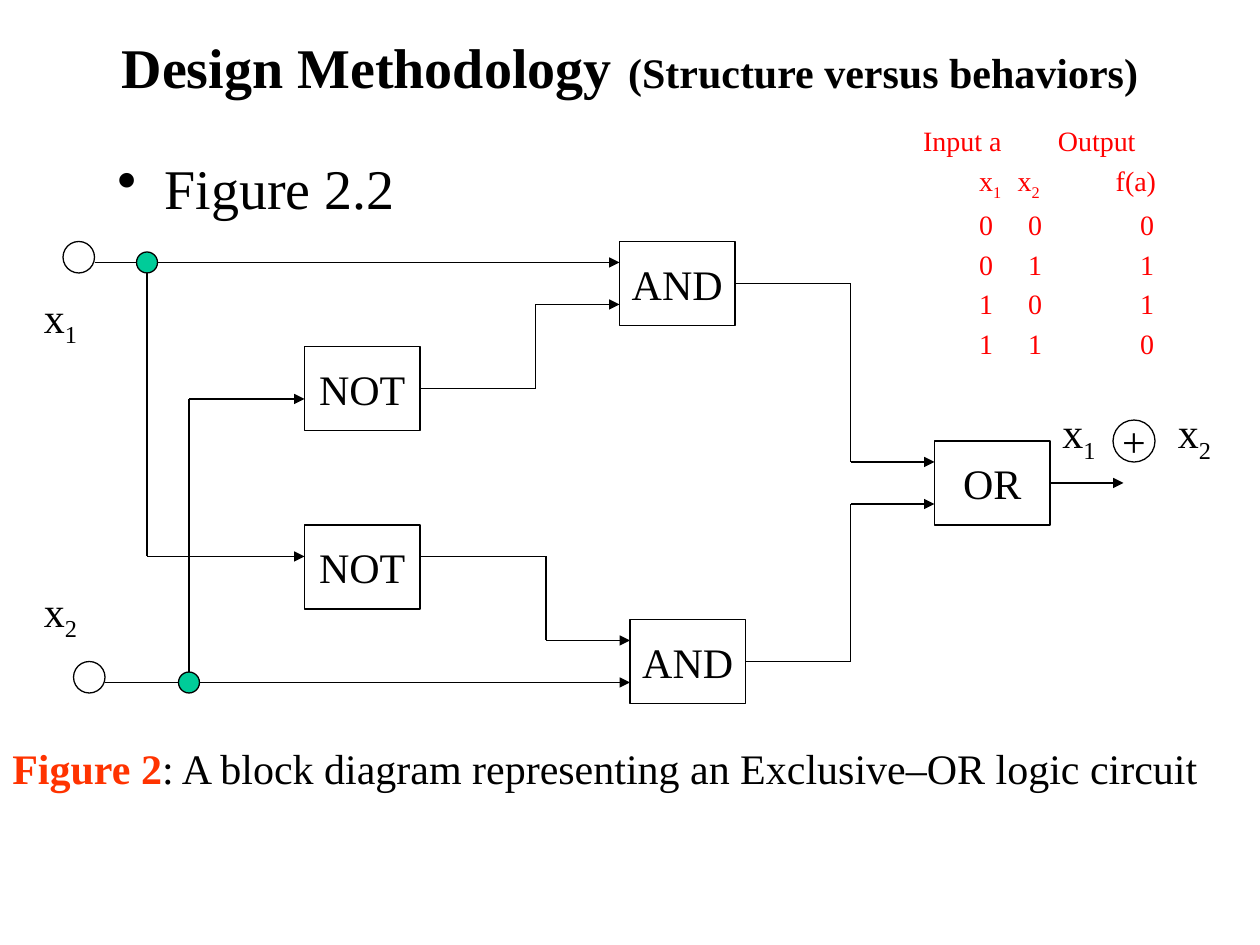
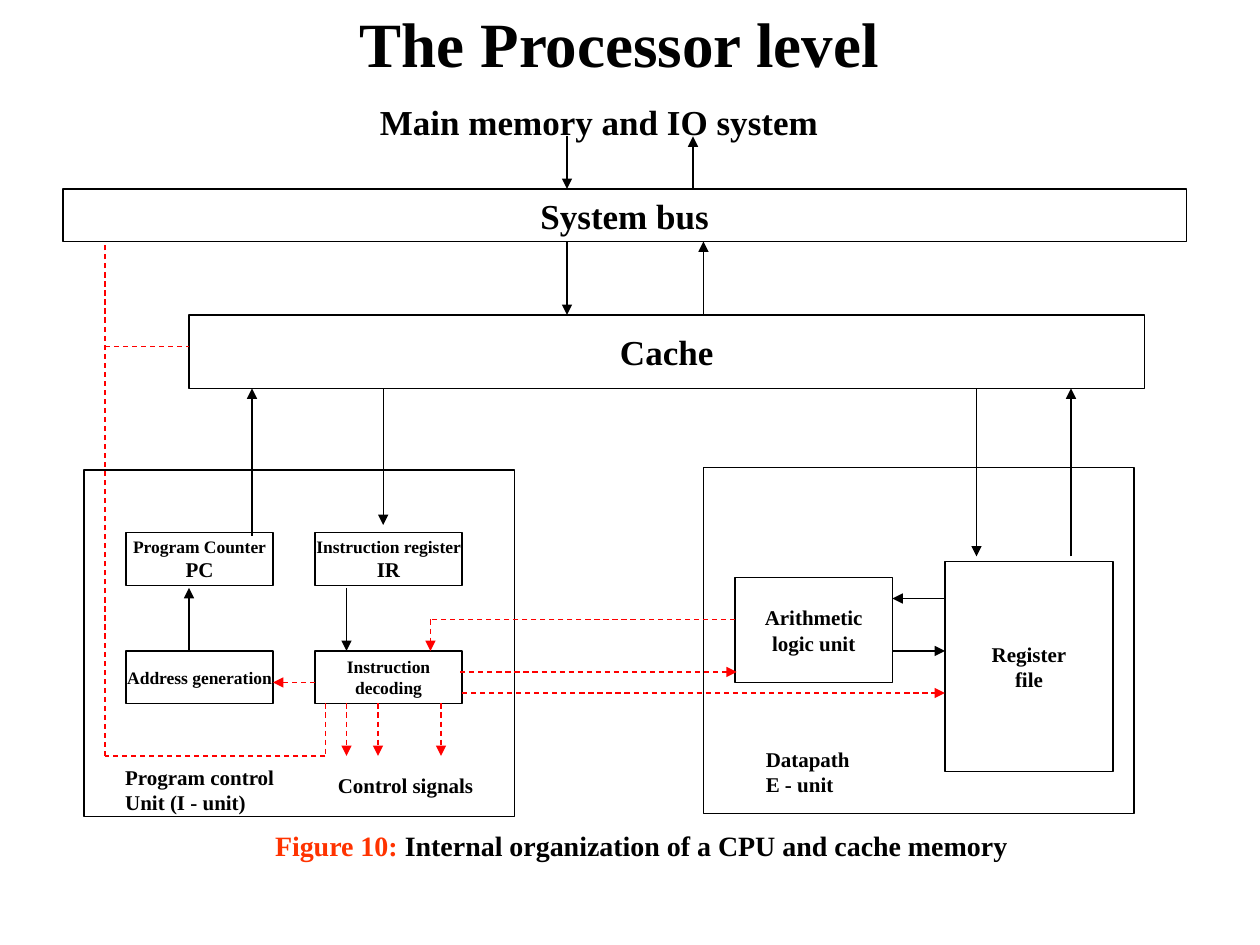
"""Build two slides of block diagrams: an exclusive-OR circuit and a processor."""
from collections import namedtuple

from lxml import etree
from pptx import Presentation
from pptx.dml.color import RGBColor
from pptx.enum import dml, shapes, text
from pptx.oxml import ns
from pptx.util import Pt

FONT = "Times New Roman"
BLACK, WHITE, RED, ORANGE, GREEN = "000000", "FFFFFF", "FF0000", "FF3300", "00CC99"
LEFT, CENTER = text.PP_ALIGN.LEFT, text.PP_ALIGN.CENTER
RIGHT_SIDE = 3

Run = namedtuple("Run", "text size color bold sub", defaults=(BLACK, False, False))


def rgb(value):
    return RGBColor.from_string(value)


def sub_element(parent, tag, **attrs):
    return etree.SubElement(parent, ns.qn(tag), **attrs)


def write(tf, paragraphs, align=LEFT, gap=0):
    """Fill a text frame; each paragraph is a list of runs."""
    for i, runs in enumerate(paragraphs):
        p = tf.paragraphs[0] if i == 0 else tf.add_paragraph()
        p.alignment = align
        p.space_before = Pt(gap)
        for run in runs:
            r = p.add_run()
            r.text = run.text
            r.font.name = FONT
            r.font.size = Pt(run.size)
            r.font.bold = run.bold
            r.font.color.rgb = rgb(run.color)
            if run.sub:
                r._r.get_or_add_rPr().set("baseline", "-25000")


def bold_lines(*lines):
    """Turn (text, size) pairs into bold paragraphs."""
    return [[Run(line, size, bold=True)] for line, size in lines]


def add_title_slide(prs, box, runs):
    s = prs.slides.add_slide(prs.slide_layouts[5])
    title = s.shapes.title
    title.left, title.top, title.width, title.height = map(Pt, box)
    tf = title.text_frame
    tf.auto_size = text.MSO_AUTO_SIZE.NONE
    tf.vertical_anchor = text.MSO_ANCHOR.MIDDLE
    write(tf, [runs], CENTER)
    return s


def add_text(s, box, paragraphs, align=LEFT, gap=0):
    tf = s.shapes.add_textbox(*map(Pt, box)).text_frame
    tf.word_wrap = True
    write(tf, paragraphs, align, gap)
    return tf


def add_block(s, box, paragraphs=(), kind=shapes.MSO_SHAPE.RECTANGLE, fill=WHITE):
    sp = s.shapes.add_shape(kind, *map(Pt, box))
    sp.shadow.inherit = False
    sp.fill.solid()
    sp.fill.fore_color.rgb = rgb(fill)
    sp.line.color.rgb = rgb(BLACK)
    sp.line.width = Pt(0.75)
    tf = sp.text_frame
    tf.word_wrap = False
    tf.vertical_anchor = text.MSO_ANCHOR.MIDDLE
    write(tf, paragraphs, CENTER)
    return sp


def add_circle(s, x, y, size, paragraphs=(), fill=WHITE):
    return add_block(s, (x, y, size, size), paragraphs, shapes.MSO_SHAPE.OVAL, fill)


def add_route(s, *points, arrow=True, control=False, source=None):
    """Draw straight segments through the points, with an arrowhead at the end."""
    for i, (start, end) in enumerate(zip(points, points[1:])):
        c = s.shapes.add_connector(shapes.MSO_CONNECTOR.STRAIGHT, *map(Pt, start + end))
        if source is not None and i == 0:
            c.begin_connect(source, RIGHT_SIDE)
        c.line.color.rgb = rgb(RED if control else BLACK)
        c.line.width = Pt(0.75)
        if control:
            c.line.dash_style = dml.MSO_LINE.DASH
        properties = c._element.spPr
        if arrow and i == len(points) - 2:
            sub_element(properties.find(ns.qn("a:ln")), "a:tailEnd", type="triangle")
        sub_element(properties, "a:effectLst")


def add_variable(s, x, y, index):
    add_text(s, (x, y, 42, 36), [[Run("x", 24), Run(index, 24, sub=True)]])


def add_bullet(s, box, line, size):
    p = add_text(s, box, [[Run(line, size)]], gap=4).paragraphs[0]
    pPr = p._p.get_or_add_pPr()
    pPr.set("marL", str(Pt(27)))
    pPr.set("indent", str(Pt(-27)))
    sub_element(pPr, "a:buChar", char="•")


def add_truth_table(s, box):
    """Write the truth table as lines aligned on tab stops."""
    def red(line, sub=False):
        return Run(line, 16, RED, sub=sub)

    rows = [[red("Input a\tOutput")],
            [red("\tx"), red("1", True), red("\tx"), red("2", True), red("\tf(a)")]]
    rows += [[red(f"\t{a}\t{b}\t{a ^ b}")] for a in (0, 1) for b in (0, 1)]
    stops = [(77,), (32, 54, 110)] + [(32, 60, 124)] * 4
    tf = add_text(s, box, rows, gap=3.5)
    for p, places in zip(tf.paragraphs, stops):
        tabs = sub_element(p._p.get_or_add_pPr(), "a:tabLst")
        for place in places:
            sub_element(tabs, "a:tab", pos=str(Pt(place)), algn="l")


def build_circuit(prs):
    s = add_title_slide(prs, (54, 12, 612, 48), [
        Run("Design Methodology", 32, bold=True), Run(" ", 36, bold=True),
        Run("(Structure versus behaviors)", 24, bold=True)])
    add_bullet(s, (60, 84, 612, 48), "Figure 2.2", 32)

    def gate(x, y, name):
        return add_block(s, (x, y, 66, 48), [[Run(name, 24)]])

    gate(174, 300, "NOT")
    not_top = gate(174, 198, "NOT")
    and_top = gate(354, 138, "AND")
    and_bottom = gate(360, 354, "AND")
    or_gate = gate(534, 252, "OR")

    add_route(s, (54, 150), (354, 150))
    add_route(s, (60, 390), (360, 390))
    add_route(s, (108, 390), (108, 228), (174, 228))
    add_route(s, (84, 150), (84, 318), (174, 318))
    add_route(s, (240, 318), (312, 318), (312, 366), (360, 366))
    add_route(s, (240, 222), (306, 222), (306, 174), (354, 174), source=not_top)
    add_route(s, (420, 162), (486, 162), (486, 264), (534, 264), source=and_top)
    add_route(s, (426, 378), (486, 378), (486, 288), (534, 288), source=and_bottom)
    add_route(s, (600, 276), (642, 276), source=or_gate)

    for x, y in ((36, 138), (42, 378)):
        add_circle(s, x, y, 18)
    for x, y in ((78, 144), (102, 384)):
        add_circle(s, x, y, 12, fill=GREEN)
    for x, y, index in ((18, 163, "1"), (18, 331, "2"), (600, 229, "1"), (666, 229, "2")):
        add_variable(s, x, y, index)
    add_circle(s, 636, 240, 24, [[Run("+", 24)]])

    add_text(s, (0, 421, 720, 36), [[
        Run("Figure 2", 24, ORANGE, True),
        Run(": A block diagram representing an Exclusive–OR logic circuit", 24)]])
    add_truth_table(s, (520.5, 67, 189, 153))


def build_processor(prs):
    s = add_title_slide(prs, (48, 0, 612, 48), [Run("The Processor level", 36, bold=True)])

    blocks = [
        ((36, 108, 642, 30), [("System bus", 20)]),
        ((108, 180, 546, 42), [("Cache", 20)]),
        ((48, 268.5, 246, 198), []),
        ((402, 267, 246, 198), []),
        ((72, 304.5, 84, 30), [("Program Counter", 10), ("PC", 12)]),
        ((180, 304.5, 84, 30), [("Instruction register", 10), ("IR", 12)]),
        ((72, 372, 84, 30), [("Address generation", 10)]),
        ((180, 372, 84, 30), [("Instruction", 10), ("decoding", 10)]),
        ((420, 330, 90, 60), [("Arithmetic", 12), ("logic unit", 12)]),
        ((540, 321, 96, 120), [("Register", 12), ("file", 12)]),
    ]
    for box, lines in blocks:
        add_block(s, box, bold_lines(*lines))

    vertical_data = [
        (324, 78, 108), (396, 108, 78), (324, 138, 180), (402, 180, 138),
        (558, 222, 318), (612, 318, 222), (198, 336, 372), (108, 372, 336),
        (144, 306, 222), (219, 222, 300),
    ]
    for x, start, end in vertical_data:
        add_route(s, (x, start), (x, end))
    add_route(s, (540, 342), (510, 342))
    add_route(s, (510, 372), (540, 372))

    for x in (198, 216, 252):
        add_route(s, (x, 402), (x, 432), control=True)
    for start, end, y in ((180, 156, 390), (263, 421, 384), (264, 540, 396)):
        add_route(s, (start, y), (end, y), control=True)
    add_route(s, (420, 354), (246, 354), (246, 372), control=True)
    add_route(s, (186, 402), (186, 432), (60, 432), (60, 138), arrow=False, control=True)
    add_route(s, (60, 198), (108, 198), arrow=False, control=True)

    labels = [
        ((210, 54, 306, 31), [("Main memory and IO system", 20)]),
        ((64.5, 433.5, 103, 36), [("Program control", 12), ("Unit (I - unit)", 12)]),
        ((186, 438, 100, 22), [("Control signals", 12)]),
        ((430.5, 423, 70, 36), [("Datapath", 12), ("E - unit", 12)]),
    ]
    for box, lines in labels:
        add_text(s, box, bold_lines(*lines))
    add_text(s, (75.5, 470, 582, 29), [[
        Run("Figure 10: ", 16, ORANGE, True),
        Run("Internal organization of a CPU and cache memory", 16, bold=True)]], CENTER)


def main():
    prs = Presentation()
    prs.slide_width, prs.slide_height = Pt(720), Pt(540)
    build_circuit(prs)
    build_processor(prs)
    prs.save("out.pptx")


if __name__ == "__main__":
    main()
